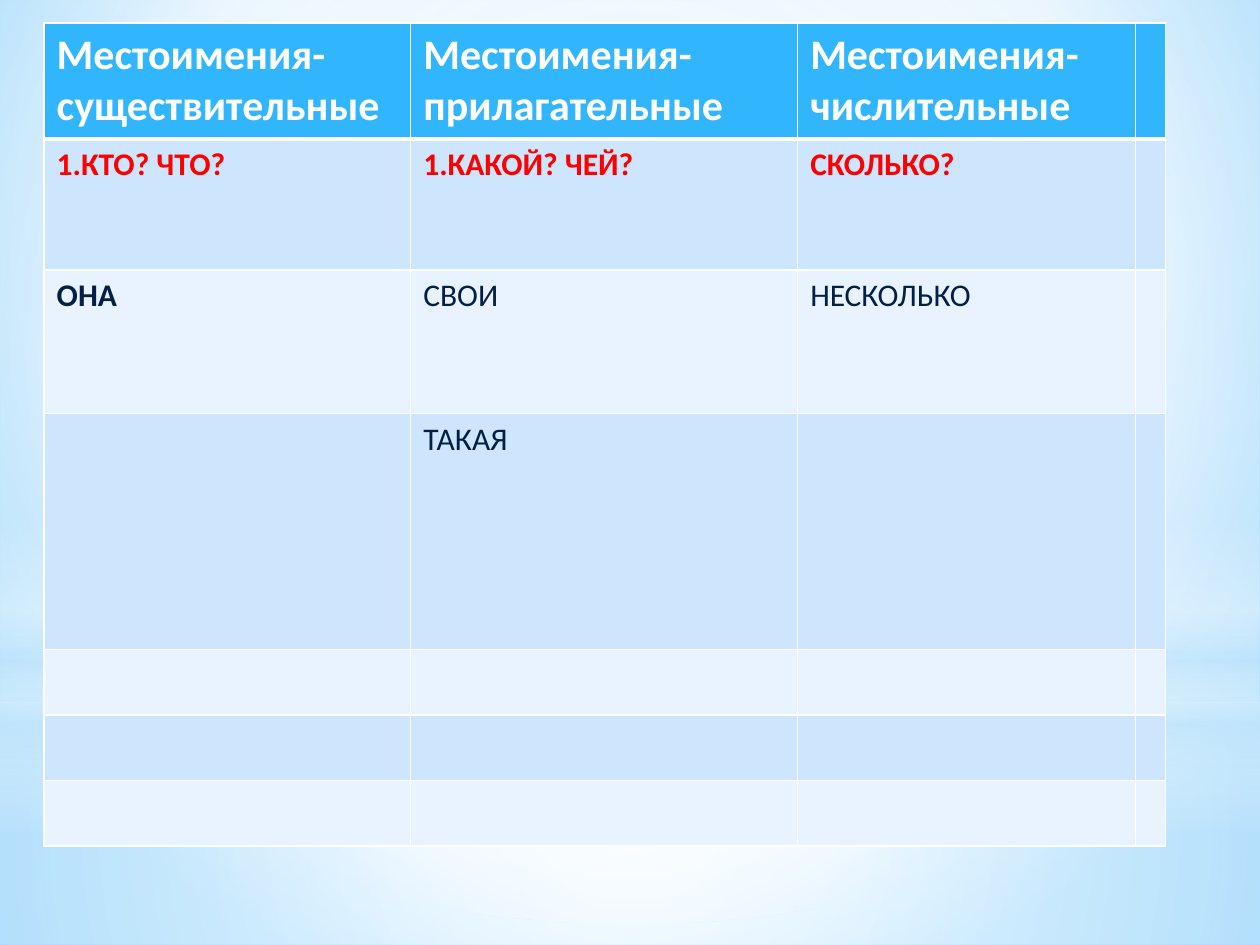
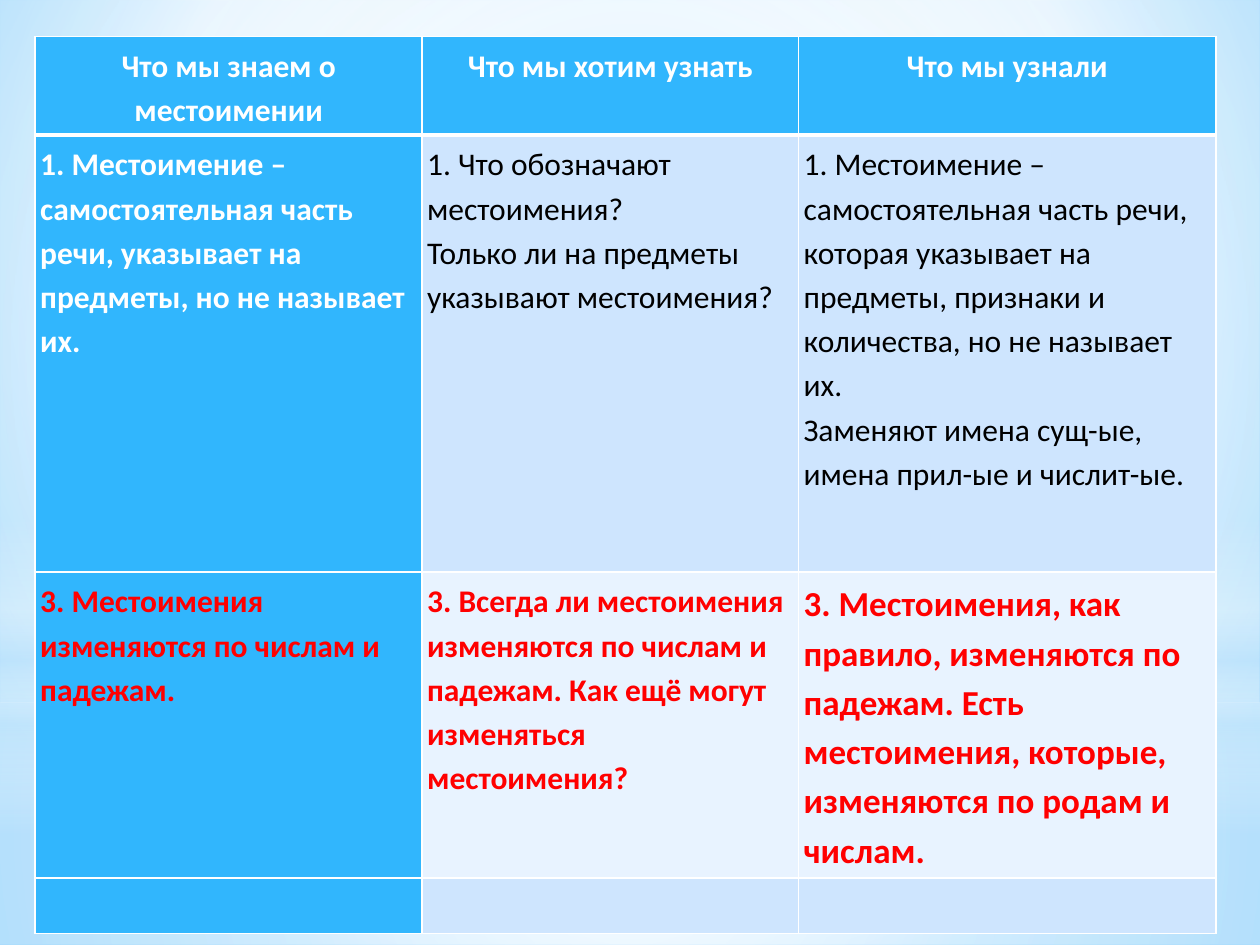
"""Build two slides of tables about Russian pronouns on a shared sky background."""
from lxml.etree import SubElement
from pptx import Presentation
from pptx.dml.color import RGBColor
from pptx.enum.shapes import MSO_SHAPE
from pptx.enum.text import PP_ALIGN
from pptx.oxml.ns import qn
from pptx.oxml.xmlchemy import OxmlElement
from pptx.util import Cm, Pt

WHITE = RGBColor(0xFF, 0xFF, 0xFF)
BLACK = RGBColor(0x00, 0x00, 0x00)
RED = RGBColor(0xFF, 0x00, 0x00)
NAVY = RGBColor(0x04, 0x1F, 0x44)
BLUE = RGBColor(0x31, 0xB6, 0xFD)
PALE = RGBColor(0xCE, 0xE5, 0xFE)
LIGHT = RGBColor(0xE8, 0xF3, 0xFF)
MIST = RGBColor(0xC6, 0xE7, 0xFC)
SKY = RGBColor(0xB0, 0xE0, 0xFF)
DEEP = RGBColor(0x6B, 0xC5, 0xFF)

WIDTH, HEIGHT = 25.4, 19.05
MIDDLE = (50, 50, 50, 50)
PLAIN = {"first_row": False, "horz_banding": False}
TIGHT = {f"margin_{side}": Cm(0.1) for side in ("left", "right", "top", "bottom")}

SKY_STOPS = [(0, SKY, 100), (60, WHITE, 100), (100, DEEP, 100)]
LAYERS = [
    (MSO_SHAPE.RECTANGLE, 14.17, 4.88, MIDDLE,
     [(0, WHITE, 91), (37, WHITE, 76), (100, MIST, 79)]),
    (MSO_SHAPE.RECTANGLE, 0, 14.17, MIDDLE,
     [(0, WHITE, 89), (48, WHITE, 62), (100, MIST, 79)]),
    (MSO_SHAPE.RECTANGLE, 10.46, 6.35, None,
     [(0, WHITE, 0), (29, WHITE, 30), (45, MIST, 40),
      (55, WHITE, 26), (65, MIST, 60), (100, WHITE, 0)]),
    (MSO_SHAPE.OVAL, 4.45, 14.17, MIDDLE, [(0, WHITE, 100), (56, WHITE, 0)]),
]


def look(color, size=18, bold=True):
    """Return the colour and font values of a text."""
    return color, {"name": "Calibri", "size": Pt(size), "bold": bold}


HEAD, BIG_HEAD = look(WHITE), look(WHITE, 24)
ALERT, BIG_ALERT = look(RED), look(RED, 20)
WORD, BOLD_WORD = look(NAVY, bold=False), look(NAVY)
NOTE = look(BLACK, bold=False)

KINDS = [
    [("Местоимения-существительные", BIG_HEAD),
     ("Местоимения-прилагательные", BIG_HEAD),
     ("Местоимения-числительные", BIG_HEAD)],
    [("1.КТО? ЧТО?", ALERT), ("1.КАКОЙ? ЧЕЙ?", ALERT), ("СКОЛЬКО?", ALERT)],
    [("ОНА", BOLD_WORD), ("СВОИ", WORD), ("НЕСКОЛЬКО", WORD)],
    [None, ("ТАКАЯ", WORD)],
]
FACTS = [
    [("Что мы знаем о местоимении", HEAD), ("Что мы хотим узнать", HEAD),
     ("Что мы узнали", HEAD)],
    [("1. Местоимение – самостоятельная часть речи, указывает на предметы, "
      "но не называет их.", HEAD),
     ("1. Что обозначают местоимения?\n"
      "Только ли на предметы указывают местоимения?", NOTE),
     ("1. Местоимение – самостоятельная часть речи, которая указывает на "
      "предметы, признаки и количества, но не называет их.\n"
      "Заменяют имена сущ-ые, имена прил-ые и числит-ые.", NOTE)],
    [("3. Местоимения изменяются по числам и падежам.", ALERT),
     ("3. Всегда ли местоимения изменяются по числам и падежам. "
      "Как ещё могут изменяться местоимения?", ALERT),
     ("3. Местоимения, как правило, изменяются по падежам. Есть местоимения, "
      "которые, изменяются по родам и числам.", BIG_ALERT)],
]


def apply(item, values):
    """Set each named value on an item."""
    for name, value in values.items():
        setattr(item, name, value)


def blend(root, stops, focus=None):
    """Replace the first empty fill under root by a gradient."""
    grad = OxmlElement("a:gradFill")
    grad.set("rotWithShape", "1")
    chain = SubElement(grad, qn("a:gsLst"))
    for place, color, alpha in stops:
        stop = SubElement(chain, qn("a:gs"), pos=str(place * 1000))
        tint = SubElement(stop, qn("a:srgbClr"), val=str(color))
        if alpha < 100:
            SubElement(tint, qn("a:alpha"), val=str(alpha * 1000))
    if focus:
        route = SubElement(grad, qn("a:path"))
        route.set("path", "circle")
        edges = {side: str(part * 1000) for side, part in zip("ltrb", focus)}
        SubElement(route, qn("a:fillToRect"), **edges)
    else:
        SubElement(grad, qn("a:lin"), ang="5400000", scaled="0")
    hole = root.find(".//" + qn("a:noFill"))
    hole.getparent().replace(hole, grad)


def add_sky(master, slide):
    """Give the master its gradient and soft layers, drawn by way of a slide."""
    master.background.fill.background()
    blend(master._element, SKY_STOPS, (20, 10, 20, 60))
    for rank, (form, top, height, focus, stops) in enumerate(LAYERS):
        shape = slide.shapes.add_shape(form, 0, Cm(top), Cm(WIDTH), Cm(height))
        shape.shadow.inherit = False
        shape.fill.background()
        blend(shape._element, stops, focus)
        shape.line.fill.background()
        shape._element.nvSpPr.cNvPr.set("id", str(101 + rank))
        master.shapes._spTree.insert(2 + rank, shape._element)


def add_lines(cell, row):
    """Draw white cell borders, with a thick rule below the head row."""
    props = cell._tc.get_or_add_tcPr()
    thick = {0: "B", 1: "T"}.get(row)
    for rank, side in enumerate("LRTB"):
        line = OxmlElement(f"a:ln{side}")
        line.set("w", str(Pt(3 if side == thick else 1)))
        fill = SubElement(line, qn("a:solidFill"))
        SubElement(fill, qn("a:srgbClr"), val=str(WHITE))
        props.insert(rank, line)


def add_text(cell, text, style, layout):
    """Write a text in a cell."""
    color, font = style
    para = cell.text_frame.paragraphs[0]
    para.text = text
    apply(para, layout)
    for run in para.runs:
        apply(run.font, font)
        run.font.color.rgb = color


def add_grid(slide, left, top, cols, rows, texts, side=False, margins={}, spacing=None):
    """Add a banded table, with a blue first column if side is set."""
    frame = slide.shapes.add_table(len(rows), len(cols), Cm(left), Cm(top),
                                   Cm(sum(cols)), Cm(sum(rows)))
    table = frame.table
    apply(table, PLAIN)
    for col, width in zip(table.columns, cols):
        col.width = Cm(width)
    for r, height in enumerate(rows):
        table.rows[r].height = Cm(height)
        for c in range(len(cols)):
            cell = table.cell(r, c)
            blue = r == 0 or side and c == 0
            cell.fill.solid()
            cell.fill.fore_color.rgb = BLUE if blue else (LIGHT, PALE)[r % 2]
            add_lines(cell, r)
            apply(cell, margins)
            if r < len(texts) and c < len(texts[r]) and texts[r][c]:
                layout = {"line_spacing": spacing}
                if side and r == 0:
                    layout["alignment"] = PP_ALIGN.CENTER
                add_text(cell, *texts[r][c], layout)


def main():
    """Build and save the slides."""
    deck = Presentation()
    apply(deck, {"slide_width": Cm(WIDTH), "slide_height": Cm(HEIGHT)})
    blank = deck.slide_layouts[6]
    kinds, facts = [deck.slides.add_slide(blank) for _ in range(2)]
    add_sky(deck.slide_master, kinds)
    add_grid(kinds, 0.89, 0.46, [7.39, 7.8, 6.81, 0.61],
             [2.34, 2.64, 2.9, 4.75] + [1.32] * 3, KINDS)
    add_grid(facts, 0.71, 0.74, [7.8, 7.59, 8.41], [1.93, 8.81, 6.17, 1.12],
             FACTS, side=True, margins=TIGHT, spacing=1.15)
    deck.save("out.pptx")


if __name__ == "__main__":
    main()
